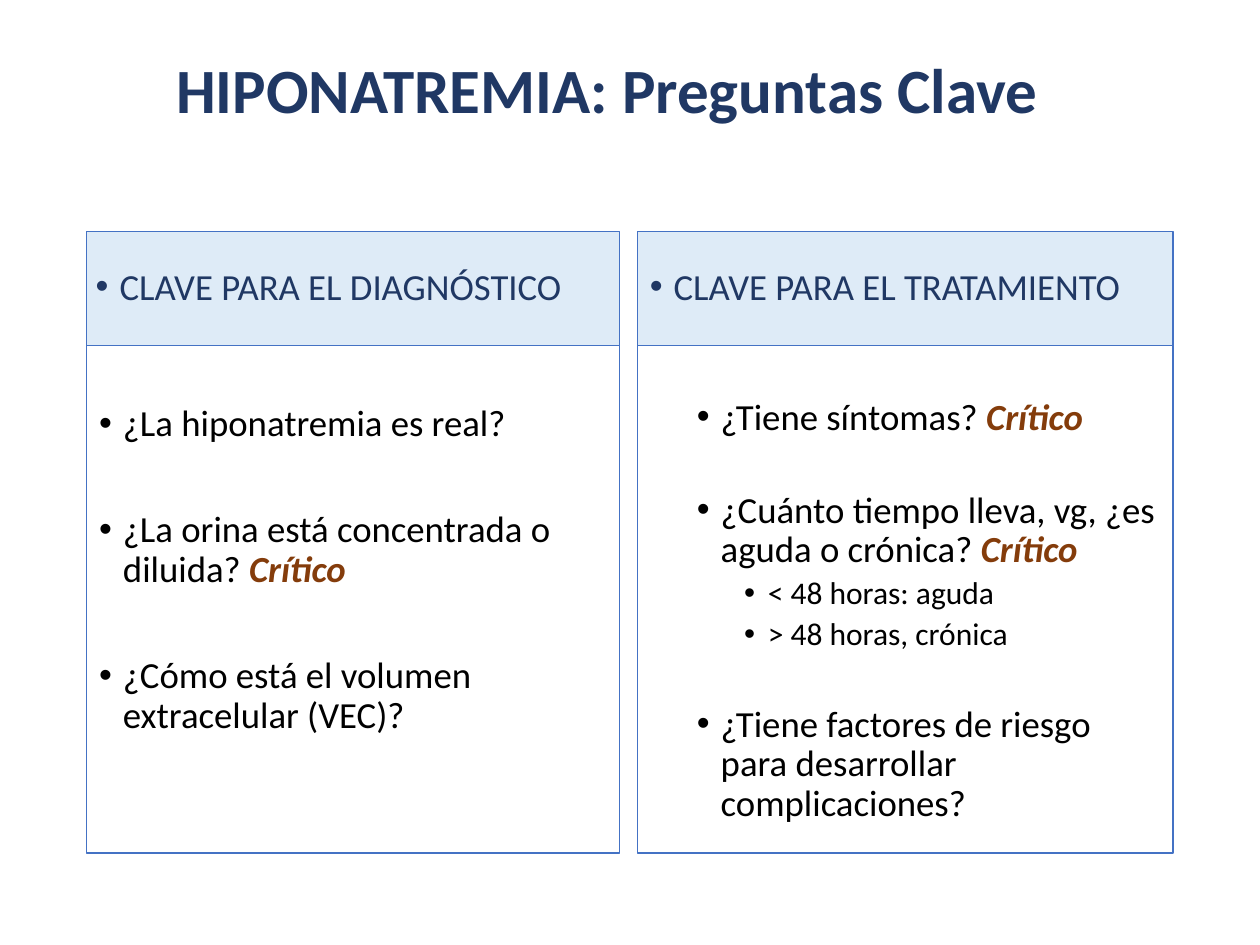
"""Build the slide with the key questions on hyponatremia."""
from dataclasses import dataclass

from lxml import etree
from pptx import Presentation
from pptx.dml.color import RGBColor
from pptx.enum.shapes import MSO_SHAPE
from pptx.enum.text import MSO_ANCHOR, PP_ALIGN
from pptx.oxml.ns import qn
from pptx.util import Cm, Pt

RECTANGLE = MSO_SHAPE.RECTANGLE
TOP, MIDDLE = MSO_ANCHOR.TOP, MSO_ANCHOR.MIDDLE
LEFT = PP_ALIGN.LEFT
HEADER_TOP, HEADER_HEIGHT, BODY_HEIGHT = 4.67, 2.29, 10.24
HANGING = 0.48
LEVEL_INDENTS = (0.48, 1.43, 2.38)


@dataclass(frozen=True)
class Theme:
    """Hold the colours and type sizes of the slide."""

    font: str = "Calibri"
    navy: RGBColor = RGBColor(0x20, 0x38, 0x64)
    black: RGBColor = RGBColor(0, 0, 0)
    brown: RGBColor = RGBColor(0x84, 0x3C, 0x0B)
    border: RGBColor = RGBColor(0x44, 0x72, 0xC4)
    header_fill: RGBColor = RGBColor(0xDE, 0xEB, 0xF7)
    title_size: int = 36
    text_size: int = 21
    detail_size: int = 18
    blank_line: float = 23
    line_spacing: float = 0.9


THEME = Theme()


def format_span(span, size, color, bold=False, italic=False):
    """Set the font of one run."""
    font = span.font
    font.name, font.size = THEME.font, Pt(size)
    font.bold, font.italic = bold, italic
    font.color.rgb = color


def format_bullet(para, level, space_before):
    """Give a paragraph its level, hanging indent, spacing and bullet."""
    para.level = level
    para.alignment = LEFT
    para.line_spacing = THEME.line_spacing
    para.space_before = Pt(space_before)
    properties = para._p.get_or_add_pPr()
    properties.set("marL", str(Cm(LEVEL_INDENTS[level])))
    properties.set("indent", str(-Cm(HANGING)))
    etree.SubElement(properties, qn("a:buFont"), typeface="Arial")
    etree.SubElement(properties, qn("a:buChar"), char="•")


def add_title(page, text):
    """Add the slide title."""
    box = page.shapes.add_textbox(Cm(3.3), Cm(0.03), Cm(21.9), Cm(3.68))
    frame = box.text_frame
    frame.word_wrap = True
    frame.vertical_anchor = MIDDLE
    frame.text = text
    para = frame.paragraphs[0]
    para.line_spacing = THEME.line_spacing
    format_span(para.runs[0], THEME.title_size, THEME.navy, bold=True)


def add_panel(page, left, top, width, height, anchor):
    """Add an outlined rectangle without fill and return it."""
    box = page.shapes.add_shape(RECTANGLE, Cm(left), Cm(top), Cm(width), Cm(height))
    box.shadow.inherit = False
    box.fill.background()
    box.line.color.rgb = THEME.border
    box.line.width = Pt(0.75)
    box.text_frame.word_wrap = True
    box.text_frame.vertical_anchor = anchor
    return box


def add_header(page, left, width, text, inset):
    """Add the tinted header of a column."""
    box = add_panel(page, left, HEADER_TOP, width, HEADER_HEIGHT, MIDDLE)
    box.fill.solid()
    box.fill.fore_color.rgb = THEME.header_fill
    frame = box.text_frame
    frame.margin_left = frame.margin_right = Cm(inset)
    frame.text = text
    para = frame.paragraphs[0]
    format_bullet(para, 0, 0)
    format_span(para.runs[0], THEME.text_size, THEME.navy)


def add_body(page, left, width, questions, spacing):
    """Add the questions of a column, with a blank line's gap before each."""
    box = add_panel(page, left, HEADER_TOP + HEADER_HEIGHT, width, BODY_HEIGHT, TOP)
    frame = box.text_frame
    frame.margin_top = Cm(0.13) + Pt(THEME.blank_line + spacing)
    for index, (level, text, mark) in enumerate(questions):
        para = frame.add_paragraph() if index else frame.paragraphs[0]
        para.text = text
        detail = level == 2
        gap = spacing if detail else THEME.blank_line + 2 * spacing
        format_bullet(para, level, gap if index else 0)
        size = THEME.detail_size if detail else THEME.text_size
        format_span(para.runs[0], size, THEME.black)
        if mark:
            span = para.add_run()
            span.text = mark
            format_span(span, size, THEME.brown, bold=True, italic=True)


def main():
    """Build and save the deck."""
    deck = Presentation()
    deck.slide_width, deck.slide_height = Cm(25.4), Cm(19.05)
    page = deck.slides.add_slide(deck.slide_layouts[6])
    add_title(page, "HIPONATREMIA: Preguntas Clave")

    diagnosis = [
        (0, "¿La hiponatremia es real?", ""),
        (0, "¿La orina está concentrada o diluida? ", "Crítico"),
        (0, "¿Cómo está el volumen extracelular (VEC)?", ""),
    ]
    treatment = [
        (1, "¿Tiene síntomas? ", "Crítico"),
        (1, "¿Cuánto tiempo lleva, vg, ¿es aguda o crónica? ", "Crítico"),
        (2, "< 48 horas: aguda", ""),
        (2, "> 48 horas, crónica", ""),
        (1, "¿Tiene factores de riesgo para desarrollar complicaciones?", ""),
    ]
    columns = [
        (1.75, 10.74, "CLAVE PARA EL DIAGNÓSTICO", 0.18, diagnosis, 7.5),
        (12.85, 10.8, "CLAVE PARA EL TRATAMIENTO", 0.25, treatment, 3.75),
    ]
    for left, width, heading, inset, questions, spacing in columns:
        add_header(page, left, width, heading, inset)
        add_body(page, left, width, questions, spacing)
    deck.save("out.pptx")


if __name__ == "__main__":
    main()
